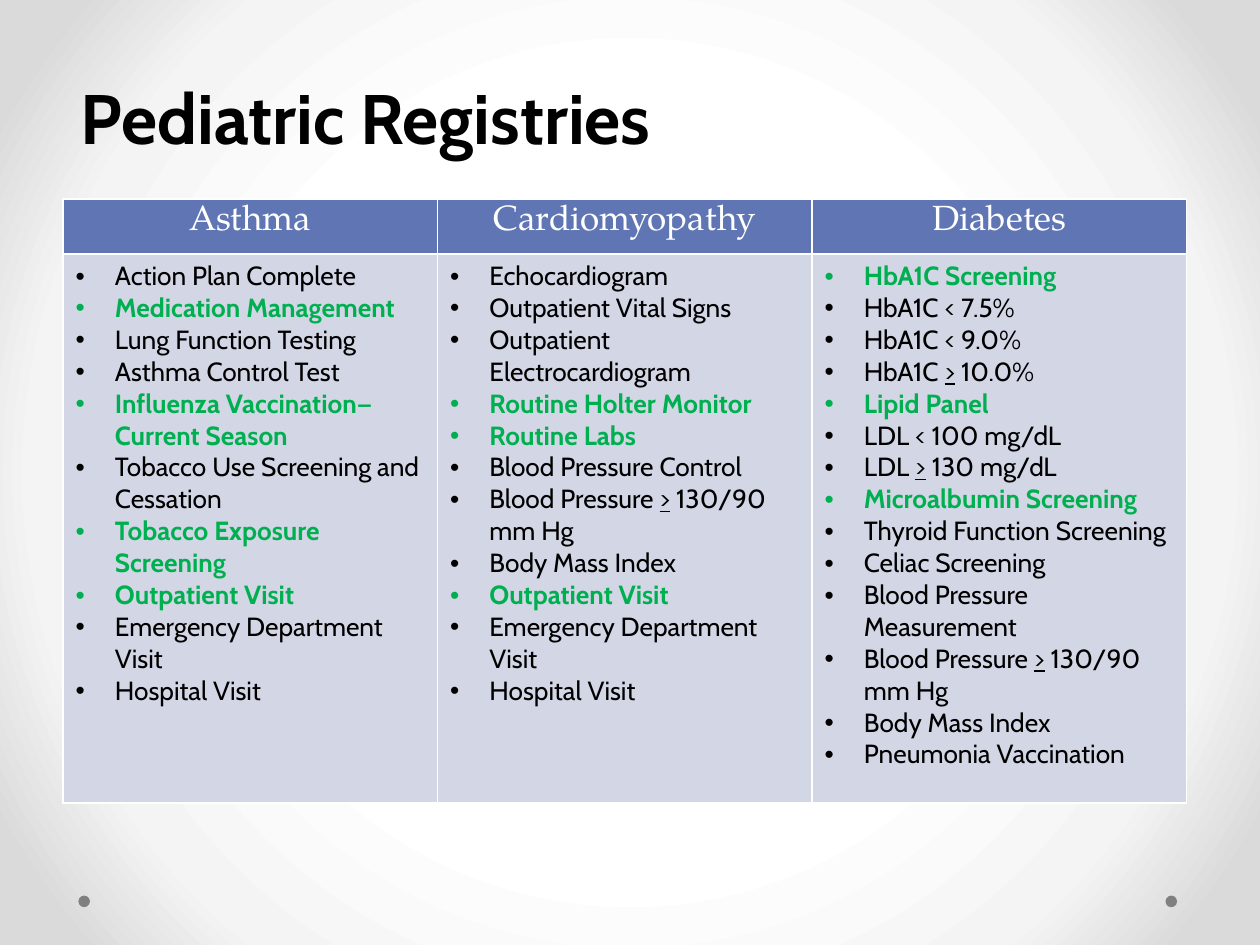
from dataclasses import dataclass

from lxml import etree
from pptx import Presentation
from pptx.dml.color import RGBColor
from pptx.enum.shapes import MSO_SHAPE
from pptx.enum.text import MSO_ANCHOR, PP_ALIGN
from pptx.oxml import parse_xml
from pptx.oxml.ns import nsdecls, qn
from pptx.util import Pt

OVAL = MSO_SHAPE.OVAL
TOP = MSO_ANCHOR.TOP
CENTER = PP_ALIGN.CENTER


@dataclass(frozen=True)
class Theme:
    title_font: str = "Cabin"
    body_font: str = "Cabin"
    header_font: str = "TeX Gyre Pagella"
    title_size: float = 40
    title_leading: float = 58
    header_size: float = 20
    body_size: float = 15
    bullet_indent: float = 22.5
    border: float = 1
    text: str = "000000"
    highlight: str = "00B050"
    header_text: str = "FFFFFF"
    header_fill: str = "6076B4"
    body_fill: str = "D2D6E5"
    line: str = "FFFFFF"
    dot: str = "808080"
    backdrop: tuple = ((0, "FFFFFF"), (50, "FFFFFF"), (76, "F4F4F4"),
                       (92, "DADADA"), (100, "DADADA"))


# Each registry lists (measure, highlighted)
REGISTRIES = {
    "Asthma": [
        ("Action Plan Complete", False),
        ("Medication Management", True),
        ("Lung Function Testing", False),
        ("Asthma Control Test", False),
        ("Influenza Vaccination—Current Season", True),
        ("Tobacco Use Screening and Cessation", False),
        ("Tobacco Exposure Screening", True),
        ("Outpatient Visit", True),
        ("Emergency Department Visit", False),
        ("Hospital Visit", False),
    ],
    "Cardiomyopathy": [
        ("Echocardiogram", False),
        ("Outpatient Vital Signs", False),
        ("Outpatient Electrocardiogram", False),
        ("Routine Holter Monitor", True),
        ("Routine Labs", True),
        ("Blood Pressure Control", False),
        ("Blood Pressure > 130/90 mm Hg", False),
        ("Body Mass Index", False),
        ("Outpatient Visit", True),
        ("Emergency Department Visit", False),
        ("Hospital Visit", False),
    ],
    "Diabetes": [
        ("HbA1C Screening", True),
        ("HbA1C < 7.5%", False),
        ("HbA1C < 9.0%", False),
        ("HbA1C > 10.0%", False),
        ("Lipid Panel", True),
        ("LDL < 100 mg/dL", False),
        ("LDL > 130 mg/dL", False),
        ("Microalbumin Screening", True),
        ("Thyroid Function Screening", False),
        ("Celiac Screening", False),
        ("Blood Pressure Measurement", False),
        ("Blood Pressure > 130/90 mm Hg", False),
        ("Body Mass Index", False),
        ("Pneumonia Vaccination", False),
    ],
}


class RegistrySlide:
    def __init__(self, slide, theme):
        self.slide = slide
        self.theme = theme

    def backdrop(self):
        stops = "".join(
            f'<a:gs pos="{position * 1000}"><a:srgbClr val="{color}"/></a:gs>'
            for position, color in self.theme.backdrop)
        gradient = parse_xml(
            f'<a:gradFill {nsdecls("a")} rotWithShape="1"><a:gsLst>{stops}</a:gsLst>'
            '<a:path path="circle"><a:fillToRect l="50000" t="50000" r="50000" b="50000"/>'
            '</a:path></a:gradFill>')
        fill = self.slide.background.fill
        fill.solid()
        background = self.slide.element.find(".//" + qn("p:bgPr"))
        background.replace(background.find(qn("a:solidFill")), gradient)

    def dot(self, left, top, size):
        dot = self.slide.shapes.add_shape(OVAL, Pt(left), Pt(top), Pt(size), Pt(size))
        dot.shadow.inherit = False
        dot.fill.solid()
        dot.fill.fore_color.rgb = RGBColor.from_string(self.theme.dot)
        dot.line.fill.background()

    def style(self, run, font, size, color, bold=False):
        run.font.name = font
        run.font.size = Pt(size)
        run.font.bold = bold
        run.font.color.rgb = RGBColor.from_string(color)

    def title(self, text, left, top, width, height):
        theme = self.theme
        box = self.slide.shapes.add_textbox(Pt(left), Pt(top), Pt(width), Pt(height))
        frame = box.text_frame
        frame.word_wrap = True
        frame.vertical_anchor = TOP
        frame.text = text
        heading = frame.paragraphs[0]
        heading.line_spacing = Pt(theme.title_leading)
        self.style(heading.runs[0], theme.title_font, theme.title_size, theme.text, bold=True)

    def cell_box(self, cell, fill):
        cell.fill.solid()
        cell.fill.fore_color.rgb = RGBColor.from_string(fill)
        properties = cell._tc.get_or_add_tcPr()
        for index, side in enumerate(("lnL", "lnR", "lnT", "lnB")):
            properties.insert(index, parse_xml(
                f'<a:{side} {nsdecls("a")} w="{Pt(self.theme.border)}"><a:solidFill>'
                f'<a:srgbClr val="{self.theme.line}"/></a:solidFill></a:{side}>'))

    def header(self, cell, name):
        theme = self.theme
        self.cell_box(cell, theme.header_fill)
        cell.text_frame.text = name
        heading = cell.text_frame.paragraphs[0]
        heading.alignment = CENTER
        self.style(heading.runs[0], theme.header_font, theme.header_size, theme.header_text)

    def bullet(self, paragraph, measure, highlighted):
        theme = self.theme
        properties = paragraph._p.get_or_add_pPr()
        properties.set("marL", str(Pt(theme.bullet_indent)))
        properties.set("indent", str(-Pt(theme.bullet_indent)))
        etree.SubElement(properties, qn("a:buFont"), typeface="Arial")
        etree.SubElement(properties, qn("a:buChar"), char="•")
        # An underlined ">" stands for "at least"
        for part in filter(None, measure.partition(">")):
            run = paragraph.add_run()
            run.text = part
            self.style(run, theme.body_font, theme.body_size,
                       theme.highlight if highlighted else theme.text, highlighted)
            run.font.underline = part == ">"

    def registries(self, registries, left, top, width, row_heights):
        table = self.slide.shapes.add_table(
            len(row_heights), len(registries), Pt(left), Pt(top),
            Pt(width), Pt(sum(row_heights))).table
        for row, height in zip(table.rows, row_heights):
            row.height = Pt(height)
        for column, (name, measures) in enumerate(registries.items()):
            table.columns[column].width = Pt(width / len(registries))
            self.header(table.cell(0, column), name)
            body = table.cell(1, column)
            self.cell_box(body, self.theme.body_fill)
            for index, (measure, highlighted) in enumerate(measures):
                frame = body.text_frame
                paragraph = frame.add_paragraph() if index else frame.paragraphs[0]
                self.bullet(paragraph, measure, highlighted)


def main():
    presentation = Presentation()
    presentation.slide_width, presentation.slide_height = Pt(720), Pt(540)
    blank = presentation.slide_layouts[6]
    page = RegistrySlide(presentation.slides.add_slide(blank), Theme())

    # Background and footer dots
    page.backdrop()
    for left in (44.8, 666):
        page.dot(left, 511.8, 6.6)

    # Title and registry table
    page.title("Pediatric Registries", 39, 29, 648, 52.5)
    page.registries(REGISTRIES, 36, 113.8, 642, (31.2, 313.8))

    presentation.save("out.pptx")


if __name__ == "__main__":
    main()
